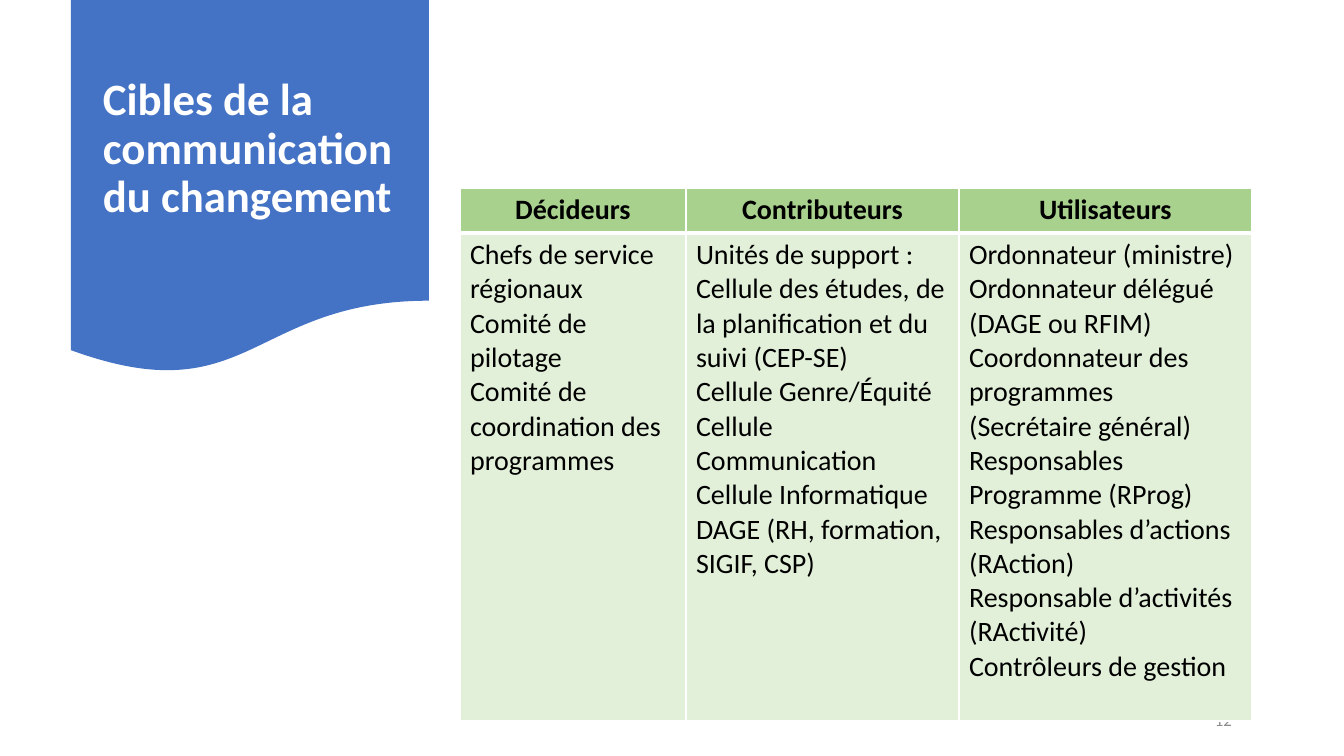
from lxml import etree
from pptx import Presentation
from pptx.dml.color import RGBColor
from pptx.enum.shapes import MSO_SHAPE
from pptx.enum.text import MSO_ANCHOR, PP_ALIGN
from pptx.oxml.ns import qn
from pptx.util import Emu, Pt

PX = 914400 / 100.8
WHITE = RGBColor(0xFF, 0xFF, 0xFF)
BLACK = RGBColor(0, 0, 0)
BLUE = RGBColor(0x44, 0x72, 0xC4)
GREY = RGBColor(0x8C, 0x8C, 0x8C)
GREEN = RGBColor(0xA9, 0xD1, 0x8E)
PALE_GREEN = RGBColor(0xE2, 0xF0, 0xD9)
DOCUMENT = MSO_SHAPE.FLOWCHART_DOCUMENT
MIDDLE, TOP = MSO_ANCHOR.MIDDLE, MSO_ANCHOR.TOP
LEFT, CENTER = PP_ALIGN.LEFT, PP_ALIGN.CENTER


def box(*lengths):
    return [Emu(round(n * PX)) for n in lengths]


def write(tf, lines, size=20, color=BLACK, bold=False, align=LEFT, spacing=None):
    tf.word_wrap = True
    for i, line in enumerate(lines):
        p = tf.paragraphs[0] if i == 0 else tf.add_paragraph()
        p.alignment = align
        p.line_spacing = spacing
        r = p.add_run()
        r.text = line
        r.font.name = "Calibri"
        r.font.size = Pt(size)
        r.font.bold = bold
        r.font.color.rgb = color


prs = Presentation()
prs.slide_width, prs.slide_height = box(1344, 756)
s = prs.slides.add_slide(prs.slide_layouts[6])

# Blue banner
banner = s.shapes.add_shape(DOCUMENT, *box(71, 0, 358, 375))
banner.shadow.inherit = False
banner.fill.solid()
banner.fill.fore_color.rgb = BLUE
banner.line.fill.background()

# Title and slide number
for lines, place, size, color, bold in (
    (["Cibles de la communication du changement"], (93, 19, 313, 261), 32, WHITE, True),
    (["12"], (1205, 701, 68, 40), 12, GREY, False),
):
    tf = s.shapes.add_textbox(*box(*place)).text_frame
    tf.vertical_anchor = MIDDLE
    write(tf, lines, size=size, color=color, bold=bold, spacing=0.9)

# Table of audiences
audiences = {
    "Décideurs": [
        "Chefs de service régionaux",
        "Comité de pilotage",
        "Comité de coordination des programmes",
    ],
    "Contributeurs": [
        "Unités de support :",
        "Cellule des études, de la planification et du suivi (CEP-SE)",
        "Cellule Genre/Équité",
        "Cellule Communication",
        "Cellule Informatique",
        "DAGE (RH, formation, SIGIF, CSP)",
    ],
    "Utilisateurs": [
        "Ordonnateur (ministre)",
        "Ordonnateur délégué (DAGE ou RFIM)",
        "Coordonnateur des programmes (Secrétaire général)",
        "Responsables Programme (RProg)",
        "Responsables d’actions (RAction)",
        "Responsable d’activités (RActivité)",
        "Contrôleurs de gestion",
    ],
}
table = s.shapes.add_table(2, 3, *box(460, 188, 792, 533)).table
for column, width in zip(table.columns, box(226, 273, 293)):
    column.width = width
for row, height in zip(table.rows, box(45, 488)):
    row.height = height

for col, (heading, members) in enumerate(audiences.items()):
    head, body = table.cell(0, col), table.cell(1, col)
    write(head.text_frame, [heading], bold=True, align=CENTER)
    write(body.text_frame, members)
    for cell, fill, top, bottom in ((head, GREEN, 1, 3), (body, PALE_GREEN, 3, 1)):
        cell.vertical_anchor = TOP
        # Borders come before the fill in the cell properties
        tcPr = cell._tc.get_or_add_tcPr()
        for side, width in (("L", 1), ("R", 1), ("T", top), ("B", bottom)):
            ln = etree.SubElement(tcPr, qn("a:ln" + side), w=str(Pt(width)))
            solid = etree.SubElement(ln, qn("a:solidFill"))
            etree.SubElement(solid, qn("a:srgbClr"), val=str(WHITE))
        cell.fill.solid()
        cell.fill.fore_color.rgb = fill

prs.save("out.pptx")
